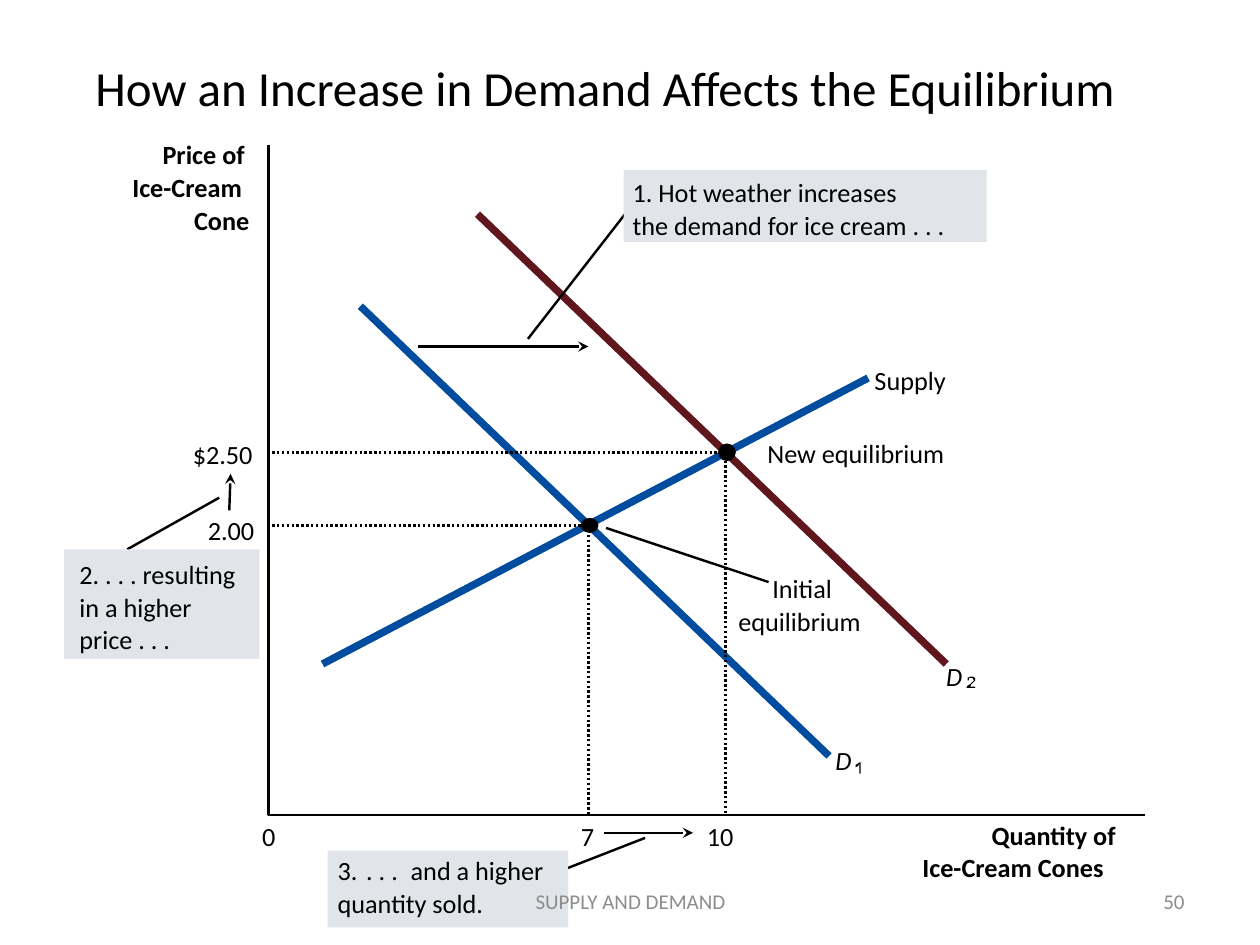
from dataclasses import dataclass

from lxml.etree import SubElement
from pptx import Presentation
from pptx.dml.color import RGBColor
from pptx.enum.dml import MSO_LINE
from pptx.enum.shapes import MSO_CONNECTOR, MSO_SHAPE
from pptx.enum.text import MSO_ANCHOR, MSO_AUTO_SIZE, PP_ALIGN
from pptx.oxml.ns import qn
from pptx.util import Inches, Pt


@dataclass(frozen=True)
class Theme:
    font: str = "Calibri"
    ink: str = "000000"
    blue: str = "004C9F"
    maroon: str = "5F161D"
    panel: str = "E1E5E9"
    grey: str = "8C8C8C"
    title_size: float = 28
    label_size: float = 15
    footer_size: float = 12
    thin: float = 1.38
    thick: float = 4.25


THEME = Theme()
LINE_PITCH = 0.26
LABEL_HEIGHT = 0.28

TITLE = "How an Increase in Demand Affects the Equilibrium"
FOOTERS = [  # text, box, alignment
    ("50", (7.17, 6.95, 2.33, 0.4), PP_ALIGN.RIGHT),
    ("SUPPLY AND DEMAND", (3.42, 6.95, 3.17, 0.4), PP_ALIGN.CENTER),
]

ORIGIN = (2.13, 6.47)
AXES_END = (9.09, 1.15)
GUIDE_LEFT = 2.16

CURVES = [  # start, end, colour
    ((6.89, 3), (2.56, 5.27), THEME.blue),
    ((2.86, 2.43), (6.58, 6), THEME.blue),
    ((3.79, 1.7), (7.51, 5.27), THEME.maroon),
]
SHIFT_ARROWS = [
    ((3.32, 2.75), (4.67, 2.75)),
    ((4.79, 6.61), (5.5, 6.61)),
    ((1.82, 4.05), (1.83, 3.76)),
]
EQUILIBRIA = [  # centre, dot width, dot height
    ((4.67, 4.17), 0.14, 0.12),
    ((5.76, 3.59), 0.14, 0.14),
]
INITIAL_LEADER = ((4.81, 4.19), (6.1, 4.62))

# Label columns: text, left, width; rows follow at LINE_PITCH.
AXIS_TITLES = [
    (1.1, [("Price of", 1.29, 0.87), ("Ice-Cream", 1.05, 1.11), ("Cone", 1.54, 0.61)]),
    (6.5, [("Quantity of", 7.87, 1.26), ("Ice-Cream Cones", 7.32, 1.81)]),
]
CURVE_LABELS = [
    (2.89, [("Supply", 6.94, 0.71)]),
    (4.54, [("Initial", 6.13, 0.58), ("equilibrium", 5.86, 1.09)]),
    (3.47, [("New equilibrium", 6.09, 1.49)]),
]
DEMAND_LABELS = [
    (5.91, [("D", 6.63, 0.24)]),
    (5.24, [("D", 7.51, 0.24)]),
]
TICKS = [
    (6.51, [("0", 2.08, 0.21)]),
    (6.51, [("7", 4.61, 0.21)]),
    (6.51, [("10", 5.61, 0.33)]),
    (4.08, [("2.00", 1.65, 0.5)]),
    (3.48, [("$2.50", 1.53, 0.62)]),
]
CALLOUTS = [  # leader, panel, label columns
    (((5.12, 6.65), (4.35, 6.95)), (2.6, 6.75, 1.91, 0.61), [
        (6.78, [("3.", 2.68, 0.27), ("quantity sold.", 2.68, 1.3)]),
        (6.78, [(" . . .", 2.86, 0.5)]),
        (6.78, [("and a higher", 3.26, 1.24)]),
    ]),
    (((1.01, 4.36), (1.74, 3.95)), (0.51, 4.36, 1.55, 0.87), [
        (4.43, [("2. . . . resulting", 0.63, 1.36), ("in a higher", 0.63, 1.06),
                ("price . . .", 0.63, 0.89)]),
    ]),
    (((4.19, 2.69), (5.1, 1.52)), (4.95, 1.35, 2.88, 0.57), [
        (1.4, [("1. Hot weather increases", 5.02, 2.31),
               ("the demand for ice cream . . .", 5.02, 2.71)]),
    ]),
]
SUBSCRIPT_ONE = [(6.83, 6.05), (6.82, 6.05), (6.81, 6.06), (6.79, 6.07), (6.79, 6.09),
                 (6.81, 6.08), (6.82, 6.06), (6.82, 6.14), (6.83, 6.14)]
SUBSCRIPT_TWO = [(7.69, 5.45), (7.7, 5.45), (7.71, 5.43), (7.73, 5.41), (7.74, 5.4),
                 (7.74, 5.38), (7.72, 5.37), (7.7, 5.37), (7.68, 5.38), (7.68, 5.4),
                 (7.69, 5.4), (7.69, 5.38), (7.72, 5.38), (7.73, 5.4), (7.72, 5.41),
                 (7.7, 5.43), (7.68, 5.44), (7.67, 5.46), (7.74, 5.46), (7.74, 5.45)]


def inches(values):
    return [Inches(value) for value in values]


def style_line(line, color, width):
    line.color.rgb = RGBColor.from_string(color)
    line.width = Pt(width)


def add_line(slide, start, end, color=THEME.ink, width=THEME.thin, arrow=False):
    connector = slide.shapes.add_connector(MSO_CONNECTOR.STRAIGHT, *inches(start + end))
    style_line(connector.line, color, width)
    if arrow:
        SubElement(connector.line._get_or_add_ln(), qn("a:tailEnd"), type="stealth")
    SubElement(connector._element.spPr, qn("a:effectLst"))


def add_path(slide, points, closed=False):
    """Draw a filled outline when closed, otherwise a thin open line."""
    start, *rest = [inches(point) for point in points]
    builder = slide.shapes.build_freeform(*start)
    builder.add_line_segments(rest, close=closed)
    shape = builder.convert_to_shape()
    shape.shadow.inherit = False
    if closed:
        shape.fill.solid()
        shape.fill.fore_color.rgb = RGBColor.from_string(THEME.ink)
        shape.line.fill.background()
    else:
        shape.fill.background()
        style_line(shape.line, THEME.ink, THEME.thin)
    return shape


def add_solid(slide, preset, box, color):
    shape = slide.shapes.add_shape(preset, *inches(box))
    shape.shadow.inherit = False
    shape.fill.solid()
    shape.fill.fore_color.rgb = RGBColor.from_string(color)
    shape.line.fill.background()


def add_text(slide, text, box, size, color=THEME.ink, bold=False, italic=False):
    text_frame = slide.shapes.add_textbox(*inches(box)).text_frame
    text_frame.text = text
    text_frame.word_wrap = True
    text_frame.vertical_anchor = MSO_ANCHOR.MIDDLE
    font = text_frame.paragraphs[0].runs[0].font
    font.name, font.size = THEME.font, Pt(size)
    font.bold, font.italic = bold, italic
    font.color.rgb = RGBColor.from_string(color)
    return text_frame


def add_labels(slide, columns, **style):
    for top, rows in columns:
        for index, (text, left, width) in enumerate(rows):
            box = (left, top + index * LINE_PITCH, width, LABEL_HEIGHT)
            text_frame = add_text(slide, text, box, THEME.label_size, **style)
            text_frame.word_wrap = False
            text_frame.auto_size = MSO_AUTO_SIZE.SHAPE_TO_FIT_TEXT
            text_frame.vertical_anchor = MSO_ANCHOR.TOP
            text_frame.margin_left = text_frame.margin_right = 0
            text_frame.margin_top = text_frame.margin_bottom = 0


def main():
    presentation = Presentation()
    presentation.slide_width, presentation.slide_height = Inches(10), Inches(7.5)
    slide = presentation.slides.add_slide(presentation.slide_layouts[6])

    title = add_text(slide, TITLE, (0.66, 0.38, 8.84, 0.7), THEME.title_size)
    title.paragraphs[0].line_spacing = 0.8

    add_path(slide, [(ORIGIN[0], AXES_END[1]), ORIGIN, (AXES_END[0], ORIGIN[1])])
    for start, end in SHIFT_ARROWS:
        add_line(slide, start, end, arrow=True)
    add_labels(slide, AXIS_TITLES, bold=True)
    add_line(slide, *INITIAL_LEADER)
    for start, end, color in CURVES:
        add_line(slide, start, end, color, THEME.thick)
    add_labels(slide, CURVE_LABELS)
    add_labels(slide, DEMAND_LABELS, italic=True)
    for digit in (SUBSCRIPT_ONE, SUBSCRIPT_TWO):
        add_path(slide, digit, closed=True)

    for leader, panel, columns in CALLOUTS:
        add_line(slide, *leader)
        add_solid(slide, MSO_SHAPE.RECTANGLE, panel, THEME.panel)
        add_labels(slide, columns)

    for (x, y), width, height in EQUILIBRIA:
        guide = add_path(slide, [(GUIDE_LEFT, y), (x, y), (x, ORIGIN[1])])
        guide.line.dash_style = MSO_LINE.ROUND_DOT
        dot = (x + 0.01 - width / 2, y - height / 2, width, height)
        add_solid(slide, MSO_SHAPE.OVAL, dot, THEME.ink)
    add_labels(slide, TICKS)

    for text, box, alignment in FOOTERS:
        footer = add_text(slide, text, box, THEME.footer_size, THEME.grey)
        footer.paragraphs[0].alignment = alignment

    presentation.save("out.pptx")


if __name__ == "__main__":
    main()
